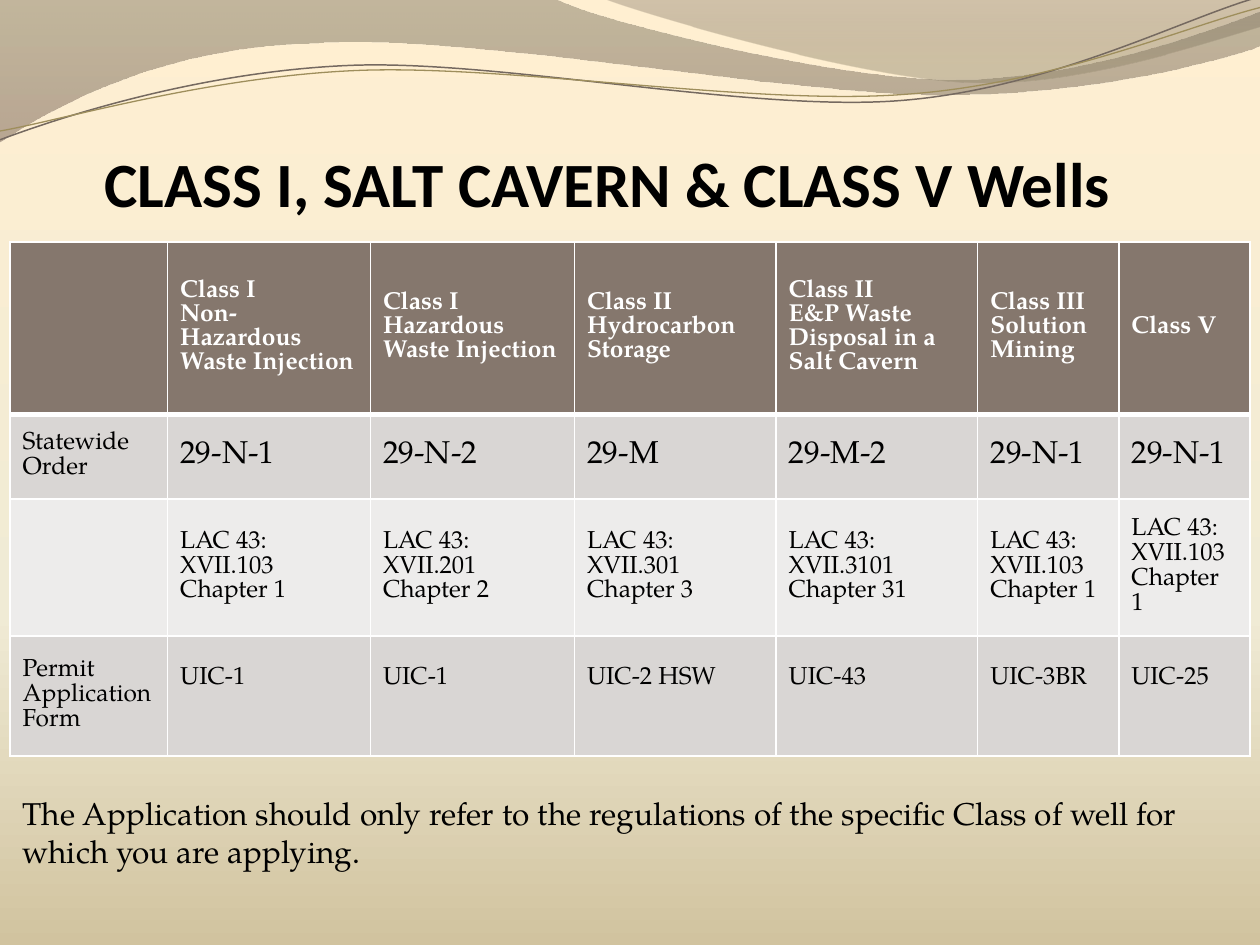
"""Build a slide comparing orders and permit forms across injection well classes."""
from lxml import etree
from pptx import Presentation
from pptx.dml.color import RGBColor
from pptx.enum.text import MSO_ANCHOR, MSO_AUTO_SIZE, PP_ALIGN
from pptx.oxml import parse_xml
from pptx.oxml.ns import nsdecls, qn
from pptx.util import Inches, Pt

MIDDLE, TOP, BOTTOM = MSO_ANCHOR.MIDDLE, MSO_ANCHOR.TOP, MSO_ANCHOR.BOTTOM
LEFT = PP_ALIGN.LEFT
NO_AUTOFIT = MSO_AUTO_SIZE.NONE
TITLE_FONT, BODY_FONT = "Calibri", "TeX Gyre Pagella"
BLACK, WHITE = "000000", "FFFFFF"

TITLE = "CLASS I, SALT CAVERN & CLASS V Wells"
NOTE = ("The Application should only refer to the regulations of the specific "
        "Class of well for which you are applying.")
WELLS = [
    ["",
     "Class I\nNon-Hazardous\nWaste Injection",
     "Class I\nHazardous\nWaste Injection",
     "Class II\nHydrocarbon\nStorage",
     "Class II\nE&P Waste Disposal in a Salt Cavern",
     "Class III\nSolution\nMining",
     "Class V"],
    ["Statewide Order", "29-N-1", "29-N-2", "29-M", "29-M-2", "29-N-1", "29-N-1"],
    ["",
     "LAC 43:\nXVII.103\nChapter 1",
     "LAC 43:\nXVII.201\nChapter 2",
     "LAC 43:\nXVII.301\nChapter 3",
     "LAC 43:\nXVII.3101\nChapter 31",
     "LAC 43:\nXVII.103\nChapter 1",
     "LAC 43:\nXVII.103\nChapter 1"],
    ["Permit Application Form", "UIC-1", "UIC-1", "UIC-2 HSW", "UIC-43", "UIC-3BR", "UIC-25"],
]
COLUMN_WIDTHS = [1.25, 1.61, 1.62, 1.6, 1.6, 1.12, 1.04]
ROW_HEIGHTS = [1.37, 0.67, 1.09, 0.95]
ROW_FILLS = ["85776D", "D9D6D4", "EDECEB", "D9D6D4"]
ROW_SIZES = [14, 18, 14, 14]

BACKGROUND = [(0, "FFEFD1", 100), (65, "F0EBD5", 100), (100, "D1C39F", 100)]
BANDS = [
    ([(0, 0), (4.4, -0.01),
      (4.76, 0.17, 6.64, 0.63, 7.58, 0.63), (8.53, 0.63, 9.58, 0.26, 10, 0.09),
      (10.01, 0.36),
      (9.83, 0.44, 8.7, 0.76, 7.46, 0.75), (6.22, 0.75, 3.82, 0.28, 2.57, 0.34),
      (1.29, 0.36, 0.46, 0.83, -0.01, 1.13)],
     [(0, "79715D", 45), (100, "7F6B5D", 55)]),
    ([(4.79, -0.01),
      (5.09, 0.11, 6.82, 0.62, 7.69, 0.65), (8.56, 0.69, 9.61, 0.32, 10, 0.21),
      (10, 0)],
     [(0, "65584E", 30), (80, "93886C", 45)]),
]
STRANDS = [
    ([(0, 1.11), (0.48, 0.93, 1.58, 0.57, 2.77, 0.52),
      (3.95, 0.47, 5.93, 0.89, 7.13, 0.8), (8.33, 0.71, 9.38, 0.15, 9.98, -0.02)],
     "756960", 0.85),
    ([(0, 1.04), (0.47, 0.96, 1.64, 0.61, 2.83, 0.56),
      (4.03, 0.51, 5.97, 0.84, 7.17, 0.75), (8.36, 0.67, 9.41, 0.21, 10, 0.06)],
     "9E8E5C", 0.75),
]


def color(hex_value):
    return RGBColor.from_string(hex_value)


def apply_gradient(fill, properties, stops):
    """Give the properties element a downward gradient of (position, colour, opacity) stops."""
    fill.solid()
    stop_xml = "".join(
        f'<a:gs pos="{position * 1000}"><a:srgbClr val="{tone}">'
        f'<a:alpha val="{opacity * 1000}"/></a:srgbClr></a:gs>'
        for position, tone, opacity in stops)
    gradient = parse_xml(f'<a:gradFill {nsdecls("a")} rotWithShape="1"><a:gsLst>{stop_xml}</a:gsLst>'
                         '<a:lin ang="5400000" scaled="0"/></a:gradFill>')
    properties.replace(properties.find(qn("a:solidFill")), gradient)


def add_wave(slide, segments, closed):
    """Draw an outline through the segment ends, bending the six-number segments."""
    start, *ends = [tuple(map(Inches, segment[-2:])) for segment in segments]
    builder = slide.shapes.build_freeform(*start)
    builder.add_line_segments(ends, close=closed)
    wave = builder.convert_to_shape()
    wave.shadow.inherit = False
    straight_lines = list(wave.element.spPr.iter(qn("a:lnTo")))
    for straight, segment in zip(straight_lines, segments[1:]):
        if len(segment) == 6:
            curve = etree.Element(qn("a:cubicBezTo"))
            for x, y in zip(segment[::2], segment[1::2]):
                etree.SubElement(curve, qn("a:pt"), x=str(Inches(x) - wave.left),
                                 y=str(Inches(y) - wave.top))
            straight.getparent().replace(straight, curve)
    return wave


def add_waves(slide):
    for segments, stops in BANDS:
        band = add_wave(slide, segments, True)
        apply_gradient(band.fill, band.element.spPr, stops)
        band.line.fill.background()
    for segments, tone, width in STRANDS:
        strand = add_wave(slide, segments, False)
        strand.fill.background()
        strand.line.color.rgb = color(tone)
        strand.line.width = Pt(width)


def format_text(frame, font_name, size, tone, bold=False):
    for paragraph in frame.paragraphs:
        paragraph.alignment = LEFT
        for run in paragraph.runs:
            run.font.name = font_name
            run.font.size = Pt(size)
            run.font.bold = bold
            run.font.color.rgb = color(tone)


def add_borders(cell, widths):
    properties = cell._tc.get_or_add_tcPr()
    for side, width in widths.items():
        border = etree.SubElement(properties, qn(f"a:ln{side}"), w=str(Pt(width)))
        solid = etree.SubElement(border, qn("a:solidFill"))
        etree.SubElement(solid, qn("a:srgbClr"), val=WHITE)


def add_wells_table(slide):
    table = slide.shapes.add_table(
        len(WELLS), len(COLUMN_WIDTHS), Inches(0.08), Inches(1.92),
        Inches(sum(COLUMN_WIDTHS)), Inches(sum(ROW_HEIGHTS))).table
    for column, width in zip(table.columns, COLUMN_WIDTHS):
        column.width = Inches(width)
    for r, labels in enumerate(WELLS):
        table.rows[r].height = Inches(ROW_HEIGHTS[r])
        header = r == 0
        for c, label in enumerate(labels):
            cell = table.cell(r, c)
            cell.text = label
            format_text(cell.text_frame, BODY_FONT, ROW_SIZES[r] if c else 14,
                        WHITE if header else BLACK, header)
            cell.vertical_anchor = MIDDLE
            if r == len(WELLS) - 1 and c:
                cell.vertical_anchor = TOP
                cell.margin_top = Inches(0.24)
            add_borders(cell, {"L": 1, "R": 1, "T": 3 if r == 1 else 1, "B": 3 if header else 1})
            cell.fill.solid()
            cell.fill.fore_color.rgb = color(ROW_FILLS[r])


def format_title(title):
    title.left, title.top, title.width, title.height = map(Inches, (0.83, 1, 8.67, 0.75))
    frame = title.text_frame
    frame.text = TITLE
    frame.auto_size = NO_AUTOFIT
    frame.vertical_anchor = BOTTOM
    frame.margin_left = frame.margin_right = frame.margin_bottom = 0
    frame.margin_top = Inches(0.05)
    format_text(frame, TITLE_FONT, 36, BLACK, True)


def add_note(slide):
    frame = slide.shapes.add_textbox(*map(Inches, (0.08, 6.25, 9.83, 0.71))).text_frame
    frame.word_wrap = True
    frame.text = NOTE
    format_text(frame, BODY_FONT, 18, BLACK)


def main():
    deck = Presentation()
    deck.slide_width, deck.slide_height = Inches(10), Inches(7.5)
    slide = deck.slides.add_slide(deck.slide_layouts[5])
    backdrop = slide.background.fill
    backdrop.solid()
    apply_gradient(backdrop, slide.element.cSld.bg.bgPr, BACKGROUND)
    add_waves(slide)
    format_title(slide.shapes.title)
    add_wells_table(slide)
    add_note(slide)
    deck.save("out.pptx")


if __name__ == "__main__":
    main()
